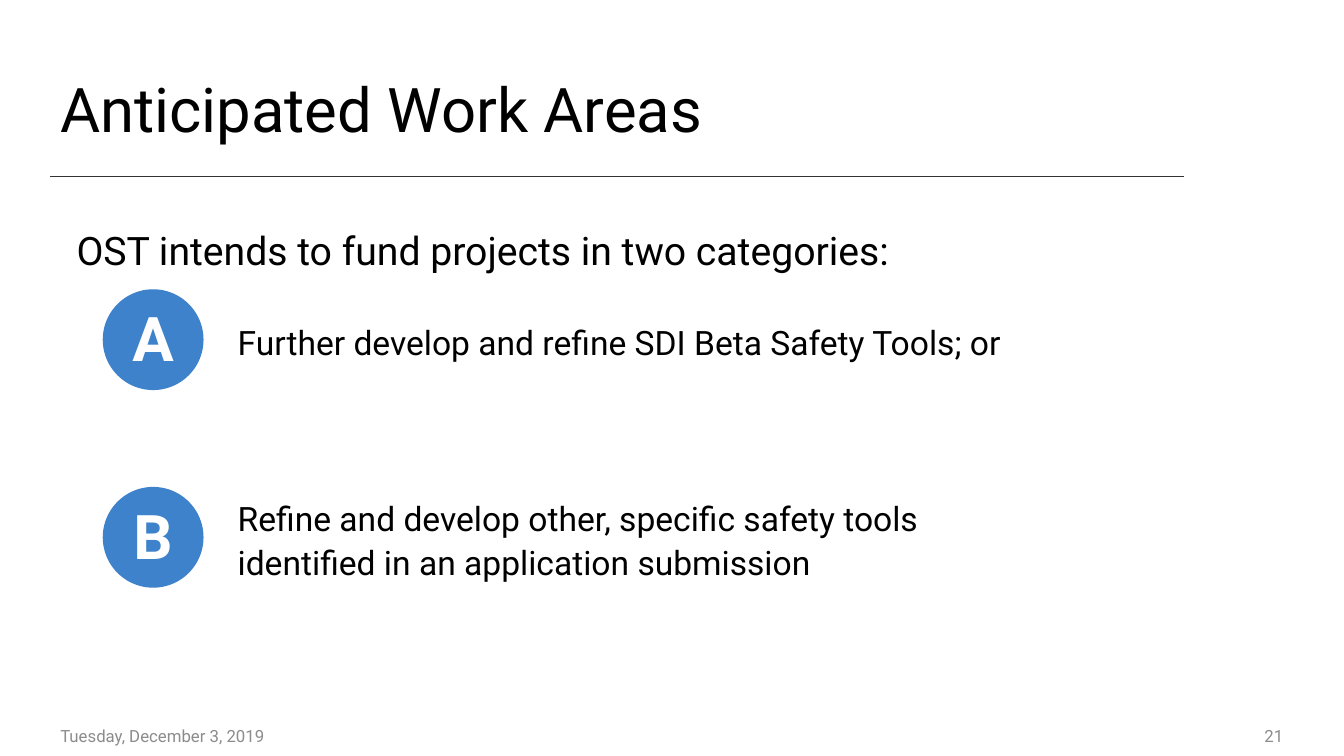
from dataclasses import dataclass

from pptx import Presentation
from pptx import util as u
from pptx.dml.color import RGBColor
from pptx.enum import shapes, text
from pptx.oxml.ns import qn
from pptx.shapes.base import BaseShape
from pptx.slide import Slide
from pptx.text.text import TextFrame, _Paragraph as Paragraph


@dataclass(frozen=True)
class Theme:
    font: str = "Roboto"
    ink: str = "000000"
    rule: str = "333333"
    footer: str = "8C8C8C"
    badge: str = "3D82CA"
    badge_ink: str = "FFFFFF"
    title_size: float = 44
    intro_size: float = 28
    category_size: float = 24
    footer_size: float = 12
    line_spacing: float = 1.08


@dataclass(frozen=True)
class Box:
    left: float
    top: float
    width: float
    height: float

    def lengths(self) -> tuple[u.Length, ...]:
        return tuple(u.Cm(n) for n in (self.left, self.top, self.width, self.height))


@dataclass(frozen=True)
class Category:
    letter: str
    description: str
    space_before: float


@dataclass(frozen=True)
class Footer:
    content: str
    box: Box
    alignment: text.PP_ALIGN


THEME = Theme()
TITLE_BOX = Box(1.27, 1.27, 24.56, 2.74)
BODY_BOX = Box(1.68, 5.49, 24.16, 12.7)
BADGE_LEFT, BADGE_TOP, BADGE_SIZE, BADGE_PITCH = 2.59, 7.29, 2.54, 4.98
CATEGORY_INDENT = 4.06

CATEGORIES = (
    Category("A", "Further develop and refine SDI Beta Safety Tools; or", 24),
    Category(
        "B",
        "Refine and develop other, specific safety tools identified in an application submission",
        87,
    ),
)
FOOTERS = (
    Footer("21", Box(24.97, 18.21, 7.62, 0.64), text.PP_ALIGN.RIGHT),
    Footer("Tuesday, December 3, 2019", Box(1.27, 18.21, 7.57, 0.64), text.PP_ALIGN.LEFT),
)


def write(paragraph: Paragraph, content: str, size: float, color: str, bold: bool = False) -> None:
    paragraph.text = content
    for run in paragraph.runs:
        run.font.name = THEME.font
        run.font.size = u.Pt(size)
        run.font.bold = bold
        run.font.color.rgb = RGBColor.from_string(color)


def add_text_frame(slide: Slide, box: Box, anchor: text.MSO_ANCHOR) -> TextFrame:
    frame = slide.shapes.add_textbox(*box.lengths()).text_frame
    frame.word_wrap = True
    frame.vertical_anchor = anchor
    return frame


def add_title(slide: Slide) -> None:
    frame = add_text_frame(slide, TITLE_BOX, text.MSO_ANCHOR.MIDDLE)
    paragraph = frame.paragraphs[0]
    write(paragraph, "Anticipated Work Areas", THEME.title_size, THEME.ink)
    paragraph.line_spacing = THEME.line_spacing


def add_title_rule(slide: Slide) -> None:
    rule = slide.shapes.add_connector(
        shapes.MSO_CONNECTOR.STRAIGHT, u.Cm(1.27), u.Cm(4.45), u.Cm(29.85), u.Cm(4.45)
    )
    rule.line.color.rgb = RGBColor.from_string(THEME.rule)
    rule.line.width = u.Pt(0.5)
    properties = rule._element.spPr
    properties.append(properties.makeelement(qn("a:effectLst"), {}))


def add_body(slide: Slide) -> None:
    frame = add_text_frame(slide, BODY_BOX, text.MSO_ANCHOR.TOP)
    write(
        frame.paragraphs[0],
        "OST intends to fund projects in two categories:",
        THEME.intro_size,
        THEME.ink,
    )
    for category in CATEGORIES:
        paragraph = frame.add_paragraph()
        write(paragraph, category.description, THEME.category_size, THEME.ink)
        paragraph.level = 1
        paragraph.space_before = u.Pt(category.space_before)
        properties = paragraph._p.get_or_add_pPr()
        properties.set("marL", str(u.Cm(CATEGORY_INDENT)))
        properties.set("indent", "0")
    for paragraph in frame.paragraphs:
        paragraph.line_spacing = THEME.line_spacing
        paragraph.space_after = u.Pt(8)


def add_badge(slide: Slide, letter: str, top: float) -> BaseShape:
    box = Box(BADGE_LEFT, top, BADGE_SIZE, BADGE_SIZE)
    badge = slide.shapes.add_shape(shapes.MSO_SHAPE.OVAL, *box.lengths())
    badge.shadow.inherit = False
    badge.fill.solid()
    badge.fill.fore_color.rgb = RGBColor.from_string(THEME.badge)
    badge.line.fill.background()
    frame = badge.text_frame
    frame.vertical_anchor = text.MSO_ANCHOR.MIDDLE
    frame.margin_bottom = u.Cm(0.25)
    write(frame.paragraphs[0], letter, THEME.title_size, THEME.badge_ink, bold=True)
    frame.paragraphs[0].alignment = text.PP_ALIGN.CENTER
    return badge


def add_footer(slide: Slide, footer: Footer) -> None:
    frame = add_text_frame(slide, footer.box, text.MSO_ANCHOR.MIDDLE)
    write(frame.paragraphs[0], footer.content, THEME.footer_size, THEME.footer)
    frame.paragraphs[0].alignment = footer.alignment


def main() -> None:
    presentation = Presentation()
    presentation.slide_width, presentation.slide_height = u.Cm(33.87), u.Cm(19.05)
    slide = presentation.slides.add_slide(presentation.slide_layouts[6])
    add_title_rule(slide)
    add_title(slide)
    add_body(slide)
    for footer in FOOTERS:
        add_footer(slide, footer)
    for index, category in enumerate(CATEGORIES):
        add_badge(slide, category.letter, BADGE_TOP + index * BADGE_PITCH)
    presentation.save("out.pptx")


if __name__ == "__main__":
    main()
